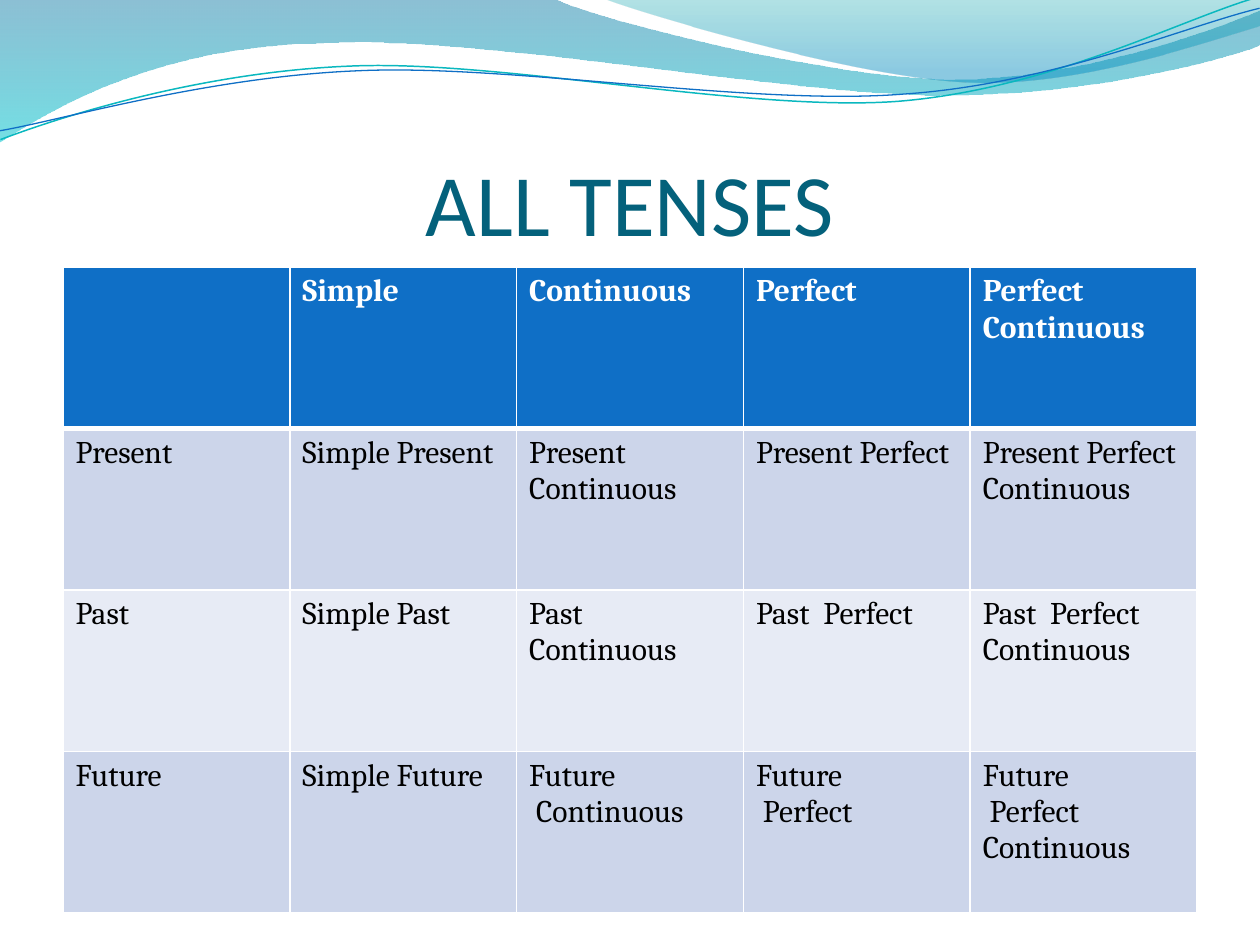
from dataclasses import dataclass
from typing import Optional

from lxml.etree import SubElement
from pptx import Presentation
from pptx.dml.color import RGBColor
from pptx.enum.text import MSO_ANCHOR, MSO_AUTO_SIZE, PP_ALIGN
from pptx.oxml.ns import qn
from pptx.util import Emu, Pt

EMU_PER_PX = 914400 / 126

Point = tuple[int, int]


@dataclass(frozen=True)
class Theme:
    title_font: str = "Calibri"
    body_font: str = "Cambria"
    title_size: int = 50
    body_size: int = 18
    title: str = "04617B"
    header: str = "0F6FC6"
    header_text: str = "FFFFFF"
    body_text: str = "000000"
    bands: tuple[str, str] = ("CCD5EA", "E7EBF5")
    border: str = "FFFFFF"
    border_width: int = 1
    header_rule: int = 3


@dataclass(frozen=True)
class GradientStop:
    position: int
    color: str
    opacity: int


@dataclass(frozen=True)
class Wave:
    """Each segment is one point (straight) or three points (cubic curve)."""
    start: Point
    segments: tuple[tuple[Point, ...], ...]
    gradient: Optional[tuple[GradientStop, GradientStop]] = None
    line_color: str = ""
    line_width: float = 0
    rotation: float = 0


THEME = Theme()

WAVES = (
    Wave((0, 0), (
        ((554, -1),),
        ((600, 21), (837, 79), (955, 79)),
        ((1075, 79), (1207, 33), (1260, 11)),
        ((1261, 45),),
        ((1239, 55), (1096, 96), (940, 95)),
        ((784, 95), (481, 35), (324, 43)),
        ((163, 45), (58, 105), (-1, 142)),
    ), gradient=(GradientStop(0, "0074A1", 45), GradientStop(100, "00C6CF", 55))),
    Wave((604, -1), (
        ((641, 14), (859, 78), (969, 82)),
        ((1079, 87), (1211, 40), (1260, 26)),
        ((1260, 0),),
    ), gradient=(GradientStop(0, "00A1A9", 30), GradientStop(80, "008BBF", 45))),
    Wave((-2, 110), (
        ((59, 90), (200, 52), (350, 53)),
        ((499, 53), (745, 118), (896, 114)),
        ((1049, 109), (1184, 45), (1260, 27)),
    ), line_color="0AB8BF", line_width=0.85, rotation=357.3),
    Wave((-2, 101), (
        ((57, 94), (207, 57), (358, 58)),
        ((509, 58), (750, 112), (902, 107)),
        ((1052, 104), (1188, 52), (1262, 38)),
    ), line_color="0F6FC6", line_width=0.75, rotation=357.3),
)

TENSES = (
    ("", "Simple", "Continuous", "Perfect", "Perfect Continuous"),
    ("Present", "Simple Present", "Present Continuous", "Present Perfect",
     "Present Perfect Continuous"),
    ("Past", "Simple Past", "Past Continuous", "Past  Perfect",
     "Past  Perfect Continuous"),
    ("Future", "Simple Future", "Future\n Continuous", "Future\n Perfect",
     "Future\n Perfect Continuous"),
)


def px(length: int) -> Emu:
    return Emu(round(length * EMU_PER_PX))


def rgb(color: str) -> RGBColor:
    return RGBColor.from_string(color)


def bend_curves(shape, wave: Wave) -> None:
    """Turn each run of three straight steps into one cubic curve."""
    steps = iter(list(shape._element.iter(qn("a:lnTo"))))
    for segment in wave.segments:
        members = [next(steps) for _ in segment]
        if len(members) == 3:
            curve = members[0].makeelement(qn("a:cubicBezTo"))
            members[0].addprevious(curve)
            for member in members:
                curve.append(member[0])
                member.getparent().remove(member)


def fill_downwards(shape, stops: tuple[GradientStop, GradientStop]) -> None:
    shape.fill.gradient()
    shape.fill.gradient_angle = 270
    for target, stop in zip(shape.fill.gradient_stops, stops):
        target.color.rgb = rgb(stop.color)
    for element, stop in zip(shape._element.iter(qn("a:gs")), stops):
        element.set("pos", str(stop.position * 1000))
        SubElement(element[0], qn("a:alpha"), val=str(stop.opacity * 1000))


def draw_wave(slide, wave: Wave) -> None:
    builder = slide.shapes.build_freeform(px(wave.start[0]), px(wave.start[1]))
    points = [(px(x), px(y)) for segment in wave.segments for x, y in segment]
    builder.add_line_segments(points, close=wave.gradient is not None)
    shape = builder.convert_to_shape()
    bend_curves(shape, wave)
    shape.rotation = wave.rotation
    shape.shadow.inherit = False
    if wave.gradient:
        fill_downwards(shape, wave.gradient)
        shape.line.fill.background()
    else:
        shape.fill.background()
        shape.line.color.rgb = rgb(wave.line_color)
        shape.line.width = Pt(wave.line_width)


def place_title(slide, text: str) -> None:
    title = slide.shapes.title
    title.left, title.top, title.width, title.height = px(63), px(97), px(1134), px(157)
    frame = title.text_frame
    frame.text = text
    frame.word_wrap = True
    frame.auto_size = MSO_AUTO_SIZE.NONE
    frame.vertical_anchor = MSO_ANCHOR.BOTTOM
    frame.margin_left = frame.margin_right = frame.margin_bottom = 0
    paragraph = frame.paragraphs[0]
    paragraph.alignment = PP_ALIGN.CENTER
    paragraph.font.name = THEME.title_font
    paragraph.font.size = Pt(THEME.title_size)
    paragraph.font.color.rgb = rgb(THEME.title)
    title._element.getparent().append(title._element)  # in front of the waves


def set_borders(cell, top: int, bottom: int) -> None:
    properties = cell._tc.get_or_add_tcPr()
    side = THEME.border_width
    for tag, width in (("lnL", side), ("lnR", side), ("lnT", top), ("lnB", bottom)):
        line = SubElement(properties, qn(f"a:{tag}"), w=str(Pt(width)))
        fill = SubElement(line, qn("a:solidFill"))
        SubElement(fill, qn("a:srgbClr"), val=THEME.border)


def draw_table(slide, rows: tuple[tuple[str, ...], ...]) -> None:
    table = slide.shapes.add_table(
        len(rows), len(rows[0]), px(63), px(267), px(1134), px(646)).table
    for row, texts in enumerate(rows):
        is_header = row == 0
        top = THEME.header_rule if row == 1 else THEME.border_width
        bottom = THEME.header_rule if is_header else THEME.border_width
        for column, text in enumerate(texts):
            cell = table.cell(row, column)
            set_borders(cell, top, bottom)
            cell.fill.solid()
            cell.fill.fore_color.rgb = rgb(
                THEME.header if is_header else THEME.bands[(row - 1) % 2])
            cell.text = text
            for paragraph in cell.text_frame.paragraphs:
                font = paragraph.font
                font.name = THEME.body_font
                font.size = Pt(THEME.body_size)
                font.bold = is_header
                font.color.rgb = rgb(THEME.header_text if is_header else THEME.body_text)


def main() -> None:
    presentation = Presentation()
    presentation.slide_width, presentation.slide_height = px(1260), px(945)
    slide = presentation.slides.add_slide(presentation.slide_layouts[5])
    for wave in WAVES:
        draw_wave(slide, wave)
    place_title(slide, "ALL TENSES")
    draw_table(slide, TENSES)
    presentation.save("out.pptx")


if __name__ == "__main__":
    main()
